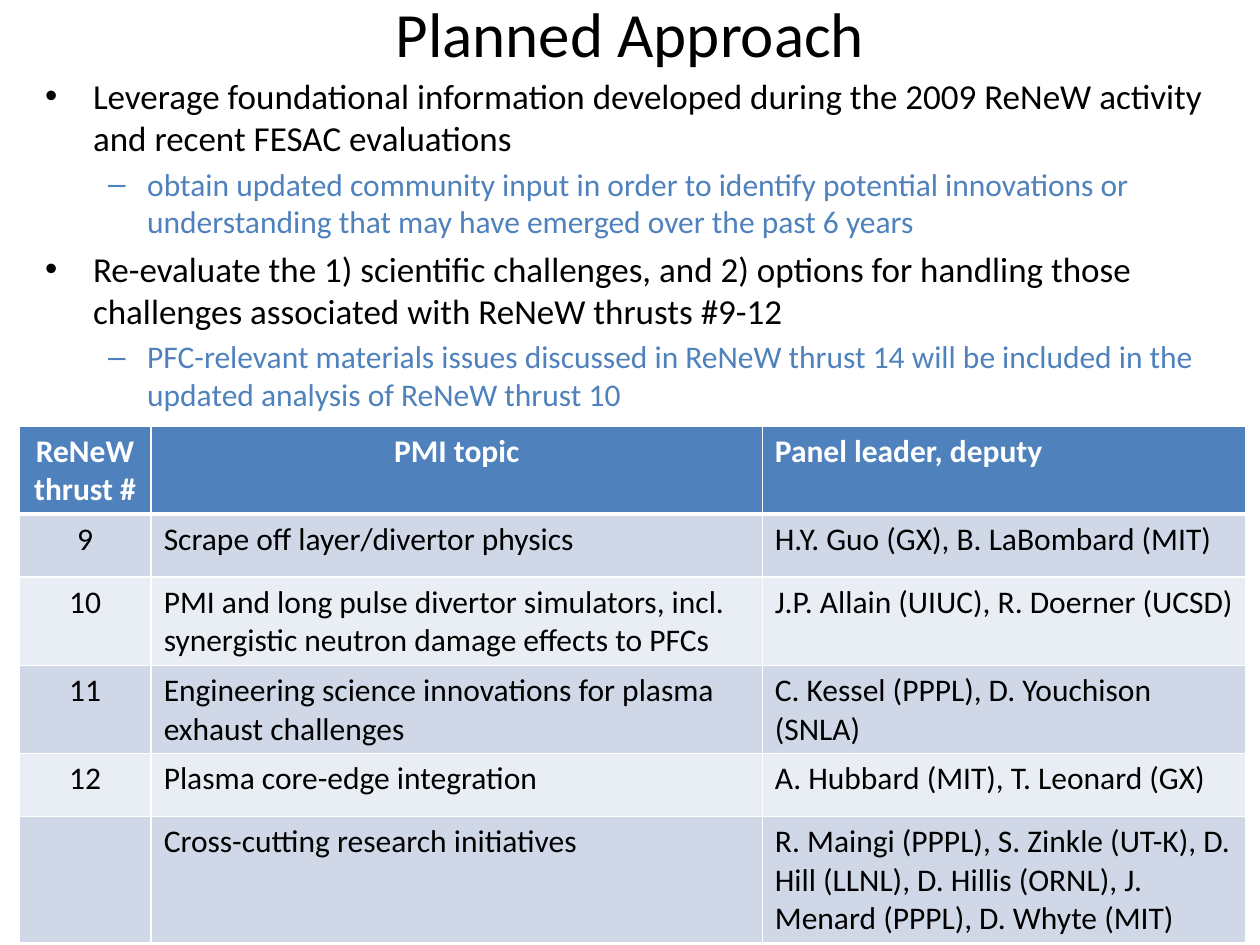
from lxml.etree import SubElement
from pptx import Presentation
from pptx.dml.color import RGBColor
from pptx.enum.text import MSO_ANCHOR, PP_ALIGN
from pptx.oxml.ns import qn
from pptx.util import Inches, Pt

BLUE, BLACK, WHITE = "4F81BD", "000000", "FFFFFF"
BANDS = ["D0D8E8", "E9EDF4"]


def rgb(hex_color):
    return RGBColor.from_string(hex_color)


def add_run(p, text, size, color, bold=False):
    r = p.add_run()
    r.text = text
    r.font.name = "Calibri"
    r.font.size = Pt(size)
    r.font.bold = bold
    r.font.color.rgb = rgb(color)


prs = Presentation()
prs.slide_width, prs.slide_height = Inches(10), Inches(7.5)
s = prs.slides.add_slide(prs.slide_layouts[6])

# Title
tf = s.shapes.add_textbox(Inches(0.5), Inches(-0.02), Inches(9), Inches(0.55)).text_frame
tf.word_wrap = True
tf.vertical_anchor = MSO_ANCHOR.MIDDLE
p = tf.paragraphs[0]
p.alignment = PP_ALIGN.CENTER
add_run(p, "Planned Approach", 36, BLACK)

# Two-level bullets: character, size, colour, left margin, hanging indent
levels = [("•", 20, BLACK, 0.38, -0.38), ("–", 18, BLUE, 0.81, -0.31)]
bullets = [
    (0, "Leverage foundational information developed during the 2009 ReNeW activity and recent FESAC evaluations"),
    (1, "obtain updated community input in order to identify potential innovations or understanding that may have emerged over the past 6 years"),
    (0, "Re-evaluate the 1) scientific challenges, and 2) options for handling those challenges associated with ReNeW thrusts #9-12"),
    (1, "PFC-relevant materials issues discussed in ReNeW thrust 14 will be included in the updated analysis of ReNeW thrust 10"),
]
tf = s.shapes.add_textbox(Inches(0.26), Inches(0.54), Inches(9.45), Inches(6.73)).text_frame
tf.word_wrap = True
for i, (level, text) in enumerate(bullets):
    char, size, color, margin, indent = levels[level]
    p = tf.add_paragraph() if i else tf.paragraphs[0]
    p.level = level
    p.space_before = Pt(0.2 * size)
    pPr = p._p.get_or_add_pPr()
    pPr.set("marL", str(Inches(margin)))
    pPr.set("indent", str(Inches(indent)))
    SubElement(pPr, qn("a:buFont"), typeface="Arial")
    SubElement(pPr, qn("a:buChar"), char=char)
    add_run(p, text, size, color)

# Panel table
rows = [
    ("ReNeW thrust #", "PMI topic", "Panel leader, deputy"),
    ("9", "Scrape off layer/divertor physics", "H.Y. Guo (GX), B. LaBombard (MIT)"),
    ("10", "PMI and long pulse divertor simulators, incl. synergistic neutron damage effects to PFCs",
     "J.P. Allain (UIUC), R. Doerner (UCSD)"),
    ("11", "Engineering science innovations for plasma exhaust challenges", "C. Kessel (PPPL), D. Youchison (SNLA)"),
    ("12", "Plasma core-edge integration", "A. Hubbard (MIT), T. Leonard (GX)"),
    ("", "Cross-cutting research initiatives",
     "R. Maingi (PPPL), S. Zinkle (UT-K), D. Hill (LLNL), D. Hillis (ORNL), J. Menard (PPPL), D. Whyte (MIT)"),
]
col_widths = [1.05, 4.85, 3.84]
row_heights = [0.7, 0.5, 0.69, 0.69, 0.5, 0.98]
table = s.shapes.add_table(len(rows), len(col_widths), Inches(0.15), Inches(3.38),
                           Inches(9.74), Inches(4.09)).table
for col, width in zip(table.columns, col_widths):
    col.width = Inches(width)
for row, height in zip(table.rows, row_heights):
    row.height = Inches(height)

for i, row in enumerate(rows):
    header = i == 0
    for j, text in enumerate(row):
        cell = table.cell(i, j)

        # White borders, heavier on both sides of the header's lower edge
        tcPr = cell._tc.get_or_add_tcPr()
        for side in ("lnL", "lnR", "lnT", "lnB"):
            heavy = (i, side) in ((0, "lnB"), (1, "lnT"))
            ln = SubElement(tcPr, qn(f"a:{side}"), w=str(Pt(3 if heavy else 1)))
            SubElement(SubElement(ln, qn("a:solidFill")), qn("a:srgbClr"), val=WHITE)

        cell.fill.solid()
        cell.fill.fore_color.rgb = rgb(BLUE if header else BANDS[(i - 1) % 2])
        p = cell.text_frame.paragraphs[0]
        if j == 0 or (header and j == 1):
            p.alignment = PP_ALIGN.CENTER
        if text:
            add_run(p, text, 18, WHITE if header else BLACK, header)

prs.save("out.pptx")
